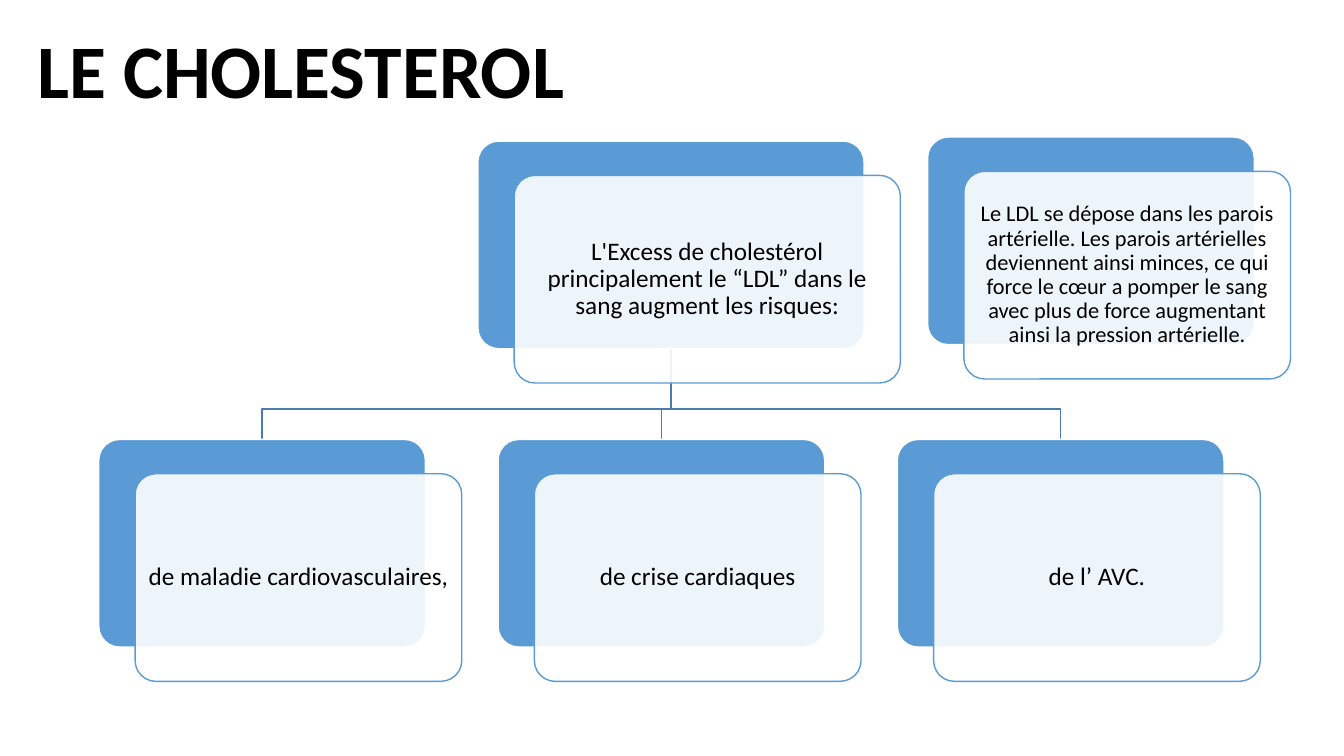
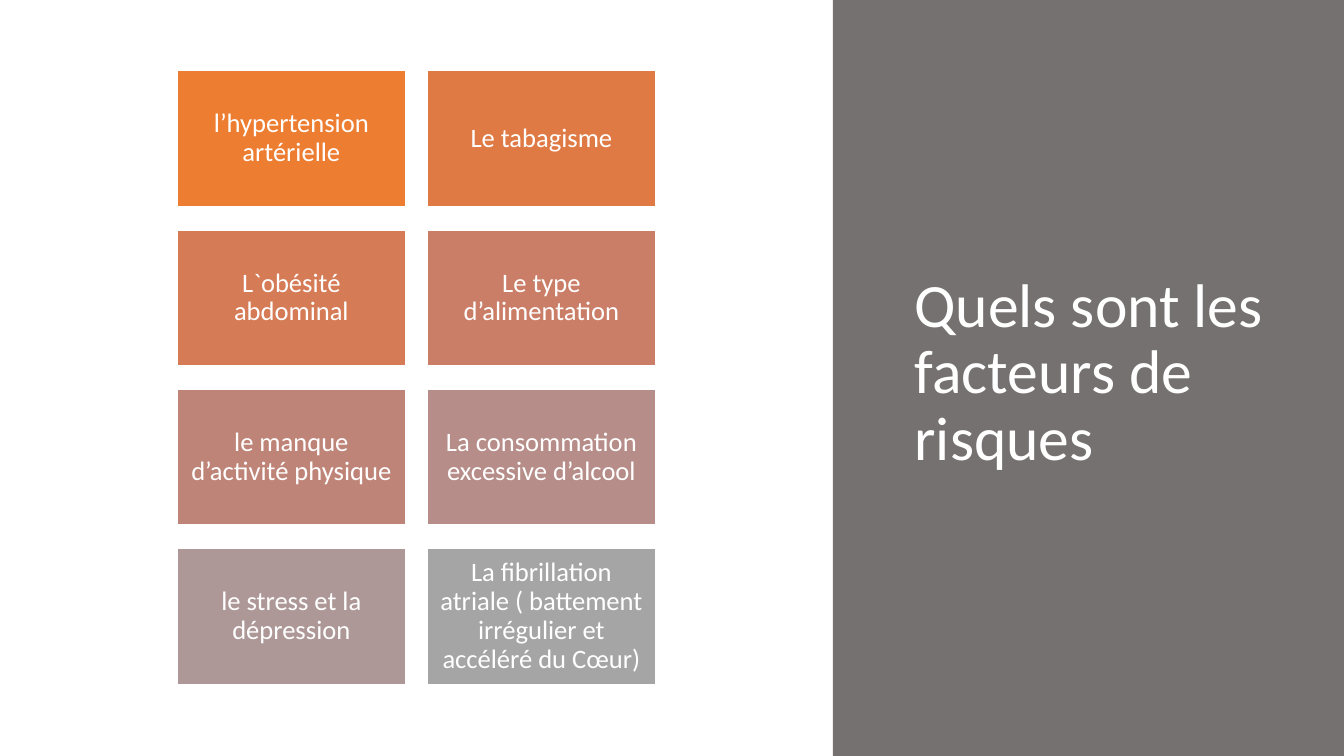
"""Build two slides: a cholesterol risk tree and a grid of risk factors."""
import pptx
import pptx.util
import pptx.dml.color
import pptx.enum.shapes
import pptx.enum.text
import lxml.etree

Inches = pptx.util.Inches
Pt = pptx.util.Pt
SHAPE = pptx.enum.shapes.MSO_SHAPE
ALIGN = pptx.enum.text.PP_ALIGN

FONT = "Calibri"
COLORS = {
    "white": "FFFFFF",
    "black": "000000",
    "blue": "5B9BD5",
    "branch": "497CAB",
    "panel": "767171",
}
CARD_HEIGHT = 2.06
CARD_WIDTH = 3.24
CARD_SHIFT = (0.36, 0.34)

CAUSE = "L'Excess de cholestérol principalement le “LDL” dans le sang augment les risques:"
MECHANISM = (
    "Le LDL se dépose dans les parois artérielle. Les parois artérielles "
    "deviennent ainsi minces, ce qui force le cœur a pomper le sang avec plus "
    "de force augmentant ainsi la pression artérielle."
)
RISKS = ["de maladie cardiovasculaires,", "de crise cardiaques", "de l’ AVC."]
FACTORS = [
    ("l’hypertension artérielle", "ED7D31"),
    ("Le tabagisme", "E07A44"),
    ("L`obésité abdominal", "D57B56"),
    ("Le type d’alimentation", "CA7E67"),
    ("le manque d’activité physique", "BF8478"),
    ("La consommation excessive d’alcool", "B68D88"),
    ("le stress et la dépression", "AD9897"),
    ("La fibrillation atriale ( battement irrégulier et accéléré du Cœur)", "A5A5A5"),
]


def rgb(value):
    """Turn a hex string into a colour."""
    return pptx.dml.color.RGBColor.from_string(value)


def write(shape, text, size, color, align=ALIGN.CENTER, bold=False):
    """Put one formatted, vertically centred paragraph into a shape."""
    frame = shape.text_frame
    frame.text = text
    frame.word_wrap = True
    frame.auto_size = pptx.enum.text.MSO_AUTO_SIZE.NONE
    frame.vertical_anchor = pptx.enum.text.MSO_ANCHOR.MIDDLE
    paragraph = frame.paragraphs[0]
    paragraph.alignment = align
    paragraph.line_spacing = 0.9
    font = paragraph.runs[0].font
    font.name, font.size, font.bold = FONT, Pt(size), bold
    font.color.rgb = rgb(color)


def set_margins(shape, margin):
    """Give the text the same margin on all four sides."""
    frame = shape.text_frame
    frame.margin_left = frame.margin_right = Inches(margin)
    frame.margin_top = frame.margin_bottom = Inches(margin)


def outline(shape, color):
    """Draw a one-point outline without shadow."""
    shape.shadow.inherit = False
    shape.line.color.rgb = rgb(color)
    shape.line.width = Pt(1)


def add_box(slide, kind, box, fill, line):
    """Add a filled and outlined preset shape."""
    shape = slide.shapes.add_shape(kind, *map(Inches, box))
    shape.fill.solid()
    shape.fill.fore_color.rgb = rgb(fill)
    outline(shape, line)
    return shape


def set_title(slide, text, box, size, color, bold=False):
    """Place and format the title placeholder."""
    title = slide.shapes.title
    title.left, title.top, title.width, title.height = map(Inches, box)
    write(title, text, size, color, ALIGN.LEFT, bold)
    return title


def set_opacity(shape, percent):
    """Make a solid fill partly transparent."""
    color = shape.element.spPr.find(".//" + pptx.oxml.ns.qn("a:srgbClr"))
    alpha = lxml.etree.SubElement(color, pptx.oxml.ns.qn("a:alpha"))
    alpha.set("val", str(percent * 1000))


def add_card(slide, left, top, text, size=18, width=CARD_WIDTH):
    """Add a blue card with a translucent text card shifted over it."""
    dx, dy = CARD_SHIFT
    back = add_box(slide, SHAPE.ROUNDED_RECTANGLE, (left, top, width, CARD_HEIGHT),
                   COLORS["blue"], COLORS["white"])
    front = add_box(slide, SHAPE.ROUNDED_RECTANGLE,
                    (left + dx, top + dy, width, CARD_HEIGHT),
                    COLORS["white"], COLORS["blue"])
    for card in (back, front):
        card.adjustments[0] = 0.1
    set_opacity(front, 90)
    set_margins(front, 0.07)
    write(front, text, size, COLORS["black"])


def add_branch(slide, start, bend, end):
    """Draw a bent line from a parent card down to a child card."""
    points = [(start[0], bend), (end[0], bend), end]
    builder = slide.shapes.build_freeform(*map(Inches, start))
    builder.add_line_segments([(Inches(x), Inches(y)) for x, y in points], close=False)
    branch = builder.convert_to_shape()
    branch.fill.background()
    outline(branch, COLORS["branch"])


def build_cholesterol(slide):
    """Build the tree of cholesterol risks."""
    set_title(slide, "LE CHOLESTEROL", (0.27, 0.12, 12.14, 1.23), 54,
              COLORS["black"], bold=True)
    cause_left, cause_top, cause_width = 4.74, 1.4, 3.83
    risk_top = 4.36
    risk_lefts = [0.98 + 3.96 * i for i in range(len(RISKS))]
    stem = (cause_left + cause_width / 2, cause_top + CARD_HEIGHT)
    for left in reversed(risk_lefts):
        add_branch(slide, stem, 4.06, (left + CARD_WIDTH / 2, risk_top))
    add_card(slide, cause_left, cause_top, CAUSE, width=cause_width)
    for left, risk in zip(risk_lefts, RISKS):
        add_card(slide, left, risk_top, risk)
    add_card(slide, 9.2, 1.36, MECHANISM, size=16)


def build_factors(slide):
    """Build the grid of risk factors beside the title panel."""
    title = set_title(slide, "Quels sont les facteurs de risques",
                      (8.97, 0.7, 4.01, 6.02), 44, COLORS["white"])
    panel = add_box(slide, SHAPE.RECTANGLE, (8.26, 0, 5.07, 7.5),
                    COLORS["panel"], COLORS["panel"])
    panel.line.fill.background()
    title.element.addprevious(panel.element)
    for i, (factor, color) in enumerate(FACTORS):
        row, column = divmod(i, 2)
        tile = add_box(slide, SHAPE.RECTANGLE,
                       (1.76 + 2.48 * column, 0.7 + 1.58 * row, 2.26, 1.35),
                       color, COLORS["white"])
        set_margins(tile, 0.08)
        write(tile, factor, 19, COLORS["white"])


def main():
    """Build and save the presentation."""
    deck = pptx.Presentation()
    deck.slide_width, deck.slide_height = Inches(13.33), Inches(7.5)
    title_only = deck.slide_layouts[5]
    for build in (build_cholesterol, build_factors):
        build(deck.slides.add_slide(title_only))
    deck.save("out.pptx")


if __name__ == "__main__":
    main()
